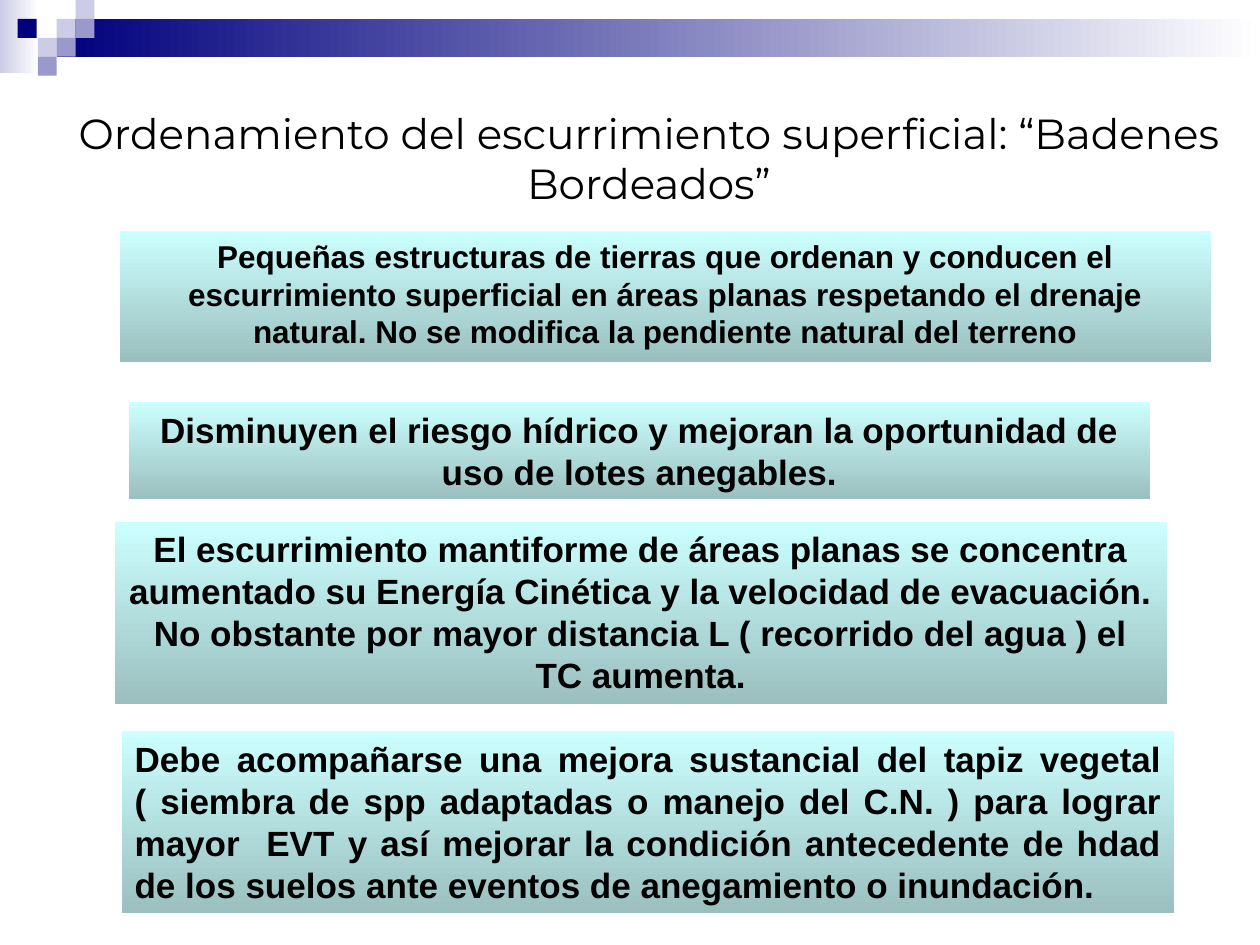
from typing import NamedTuple

from pptx import Presentation
from pptx.dml.color import RGBColor
from pptx.enum.shapes import MSO_SHAPE
from pptx.enum.text import MSO_ANCHOR, PP_ALIGN
from pptx.util import Inches, Pt

RECT = MSO_SHAPE.RECTANGLE
TOP, MIDDLE = MSO_ANCHOR.TOP, MSO_ANCHOR.MIDDLE
CENTER, JUSTIFY = PP_ALIGN.CENTER, PP_ALIGN.JUSTIFY

BLACK = RGBColor(0x00, 0x00, 0x00)
WHITE = RGBColor(0xFF, 0xFF, 0xFF)
NAVY = RGBColor(0x00, 0x00, 0x7D)
PALE = RGBColor(0xCC, 0xCC, 0xE6)
LILAC = RGBColor(0x99, 0x99, 0xCC)
AQUA = RGBColor(0xCC, 0xFF, 0xFF)
TEAL = RGBColor(0x9B, 0xBF, 0xBF)

TILE = 0.15


class Box(NamedTuple):
    left: float
    top: float
    width: float
    height: float


class Tile(NamedTuple):
    left: float
    top: float
    color: RGBColor


class Panel(NamedTuple):
    box: Box
    size: int
    align: PP_ALIGN
    text: str


TILES = [
    Tile(0.45, 0.15, PALE),
    Tile(0.6, 0, PALE),
    Tile(0.6, 0.15, LILAC),
    Tile(0.3, 0.3, PALE),
    Tile(0.14, 0.15, NAVY),
    Tile(0.45, 0.3, LILAC),
    Tile(0.3, 0.45, LILAC),
]

PANELS = [
    Panel(Box(0.95, 1.83, 8.66, 1.04), 18, CENTER,
          "Pequeñas estructuras de tierras que ordenan y conducen el "
          "escurrimiento superficial en áreas planas respetando el drenaje "
          "natural. No se modifica la pendiente natural del terreno"),
    Panel(Box(1.02, 3.19, 8.11, 0.77), 20, CENTER,
          "Disminuyen el riesgo hídrico y mejoran la oportunidad de uso de "
          "lotes anegables."),
    Panel(Box(0.91, 4.14, 8.35, 1.45), 20, CENTER,
          "El escurrimiento mantiforme de áreas planas se concentra "
          "aumentado su Energía Cinética y la velocidad de evacuación. No "
          "obstante por mayor distancia L ( recorrido del agua ) el TC "
          "aumenta."),
    Panel(Box(0.97, 5.8, 8.35, 1.45), 20, JUSTIFY,
          "Debe acompañarse una mejora sustancial del tapiz vegetal ( siembra "
          "de spp adaptadas o manejo del C.N. ) para lograr mayor  EVT y así "
          "mejorar la condición antecedente de hdad de los suelos ante "
          "eventos de anegamiento o inundación."),
]


def add_rect(slide, box: Box):
    shape = slide.shapes.add_shape(RECT, *map(Inches, box))
    shape.shadow.inherit = False
    shape.line.fill.background()
    return shape


def shade(shape, start: RGBColor, end: RGBColor, angle: int) -> None:
    shape.fill.gradient()
    shape.fill.gradient_angle = angle
    for stop, color in zip(shape.fill.gradient_stops, (start, end)):
        stop.color.rgb = color


def write(shape, text: str, face: str, size: int, bold: bool,
          align: PP_ALIGN, anchor: MSO_ANCHOR) -> None:
    frame = shape.text_frame
    frame.text = text
    frame.word_wrap = True
    frame.vertical_anchor = anchor
    line = frame.paragraphs[0]
    line.alignment = align
    font = line.runs[0].font
    font.name, font.size, font.bold = face, Pt(size), bold
    font.color.rgb = BLACK


def add_tile(slide, tile: Tile) -> None:
    shape = add_rect(slide, Box(tile.left, tile.top, TILE, TILE))
    shape.fill.solid()
    shape.fill.fore_color.rgb = tile.color


def add_panel(slide, panel: Panel) -> None:
    shape = add_rect(slide, panel.box)
    shade(shape, AQUA, TEAL, 270)
    write(shape, panel.text, "Arial", panel.size, True, panel.align, TOP)


def main() -> None:
    deck = Presentation()
    deck.slide_width, deck.slide_height = Inches(10), Inches(7.5)
    slide = deck.slides.add_slide(deck.slide_layouts[5])

    title = slide.shapes.title
    title.left, title.top = Inches(0.5), Inches(0.5)
    title.width, title.height = Inches(9.3), Inches(1.5)
    write(title, "Ordenamiento del escurrimiento superficial: “Badenes Bordeados”",
          "Montserrat", 24, False, CENTER, MIDDLE)

    shade(add_rect(slide, Box(0, 0, 0.31, 0.58)), PALE, WHITE, 0)
    shade(add_rect(slide, Box(0.45, 0.15, 9.55, 0.3)), NAVY, WHITE, 0)
    for tile in TILES:
        add_tile(slide, tile)
    for panel in PANELS:
        add_panel(slide, panel)

    deck.save("out.pptx")


if __name__ == "__main__":
    main()
